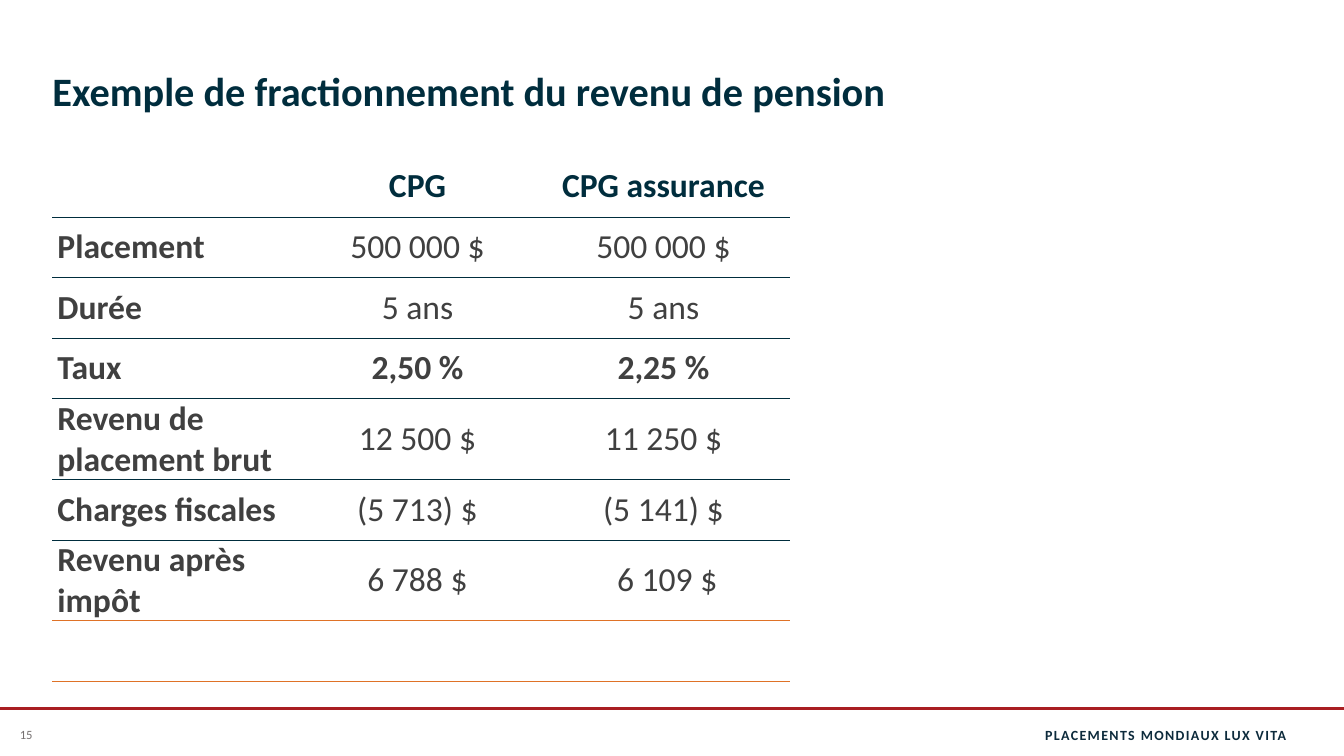
from dataclasses import dataclass

from lxml import etree
from pptx import Presentation
from pptx.dml.color import RGBColor
from pptx.enum.shapes import MSO_CONNECTOR
from pptx.enum.text import MSO_ANCHOR, MSO_AUTO_SIZE, PP_ALIGN
from pptx.oxml.ns import qn
from pptx.util import Pt

LEFT, CENTER, RIGHT = PP_ALIGN.LEFT, PP_ALIGN.CENTER, PP_ALIGN.RIGHT
MIDDLE, BOTTOM = MSO_ANCHOR.MIDDLE, MSO_ANCHOR.BOTTOM
STRAIGHT = MSO_CONNECTOR.STRAIGHT
NO_AUTOFIT = MSO_AUTO_SIZE.NONE

FONT = "Calibri"
COLORS = {
    "navy": "002D3D",
    "footer": "0D2B3C",
    "text": "404040",
    "gray": "767171",
    "red": "A91E22",
    "orange": "DF7227",
}

# Table cells end in a no-break space, except the last amount
TABLE_ROWS = [
    ("", "CPG ", "CPG assurance "),
    ("Placement ", "500 000 $ ", "500 000 $ "),
    ("Durée ", "5 ans ", "5 ans "),
    ("Taux ", "2,50 % ", "2,25 % "),
    ("Revenu de placement brut ", "12 500 $ ", "11 250 $ "),
    ("Charges fiscales ", "(5 713) $ ", "(5 141) $ "),
    ("Revenu après impôt ", "6 788 $ ", "6 109 $"),
    ("", "", ""),
]
RATE_ROW = 3
TABLE_LEFT, TABLE_TOP = 37.44, 111.6
COLUMN_WIDTH, ROW_HEIGHT = 175.68, 43.3


@dataclass
class TextStyle:
    size: float
    color: str
    bold: bool = False
    align: PP_ALIGN = LEFT


@dataclass
class Rule:
    color: str
    width: float


@dataclass
class FooterBox:
    text: str
    left: float
    width: float
    margin: float
    style: TextStyle
    spacing: int = 0


ROW_RULE = Rule("navy", 0.5)
TOTAL_RULE = Rule("orange", 1)
# One rule above each row, plus the one below the last row
RULES = [None] + [ROW_RULE] * 6 + [TOTAL_RULE] * 2

FOOTERS = [
    FooterBox("PLACEMENTS MONDIAUX LUX VITA", 696.24, 222.48, 0,
              TextStyle(10, "footer", True, RIGHT), 100),
    FooterBox("15", 0, 37.44, 7.2, TextStyle(9, "gray", align=CENTER)),
]


def rgb(name: str) -> RGBColor:
    return RGBColor.from_string(COLORS[name])


def write(frame, text: str, style: TextStyle) -> None:
    frame.text = text
    para = frame.paragraphs[0]
    para.alignment = style.align
    for span in para.runs:
        span.font.name = FONT
        span.font.size = Pt(style.size)
        span.font.bold = style.bold
        span.font.color.rgb = rgb(style.color)


def set_border(cell, side: str, rule: Rule | None) -> None:
    line = etree.SubElement(cell._tc.get_or_add_tcPr(), qn(f"a:{side}"))
    if rule is None:
        line.set("w", "0")
        etree.SubElement(line, qn("a:noFill"))
        return
    line.set("w", str(Pt(rule.width)))
    fill = etree.SubElement(line, qn("a:solidFill"))
    etree.SubElement(fill, qn("a:srgbClr")).set("val", COLORS[rule.color])


def cell_style(row: int, column: int) -> TextStyle:
    bold = column == 0 or row in (0, RATE_ROW)
    return TextStyle(24, "text" if row else "navy", bold,
                     CENTER if column else LEFT)


def add_title(page, text: str) -> None:
    title = page.shapes.title
    title.left, title.top = Pt(37.44), Pt(0)
    title.width, title.height = Pt(878.4), Pt(82.08)
    frame = title.text_frame
    frame.auto_size = NO_AUTOFIT
    frame.word_wrap = True
    frame.vertical_anchor = BOTTOM
    frame.margin_left = frame.margin_right = Pt(0)
    frame.margin_top = frame.margin_bottom = Pt(0)
    write(frame, text, TextStyle(28.8, "navy", True))


def add_comparison(page) -> None:
    rows, columns = len(TABLE_ROWS), len(TABLE_ROWS[0])
    table = page.shapes.add_table(
        rows, columns, Pt(TABLE_LEFT), Pt(TABLE_TOP),
        Pt(COLUMN_WIDTH * columns), Pt(ROW_HEIGHT * rows)).table
    table.first_row = table.horz_banding = False
    for column in table.columns:
        column.width = Pt(COLUMN_WIDTH)
    for r, texts in enumerate(TABLE_ROWS):
        table.rows[r].height = Pt(ROW_HEIGHT)
        for c, text in enumerate(texts):
            cell = table.cell(r, c)
            cell.vertical_anchor = MIDDLE
            cell.margin_left = cell.margin_right = Pt(3.6)
            cell.margin_top = cell.margin_bottom = Pt(0)
            write(cell.text_frame, text, cell_style(r, c))
            borders = {"lnL": None, "lnR": None,
                       "lnT": RULES[r], "lnB": RULES[r + 1]}
            for side, rule in borders.items():
                set_border(cell, side, rule)
            cell.fill.background()
    table.cell(rows - 1, 0).merge(table.cell(rows - 1, columns - 1))


def add_footer_line(page) -> None:
    line = page.shapes.add_connector(STRAIGHT, Pt(0), Pt(506.16),
                                     Pt(960), Pt(506.16))
    line.line.color.rgb = rgb("red")
    line.line.width = Pt(2.25)
    etree.SubElement(line._element.spPr, qn("a:effectLst"))


def add_footer(page, footer: FooterBox) -> None:
    box = page.shapes.add_textbox(Pt(footer.left), Pt(510.48),
                                  Pt(footer.width), Pt(28.8))
    frame = box.text_frame
    frame.word_wrap = True
    frame.vertical_anchor = MIDDLE
    frame.margin_left = frame.margin_right = Pt(footer.margin)
    write(frame, footer.text, footer.style)
    if footer.spacing:
        span = frame.paragraphs[0].runs[0]
        span.font._element.set("spc", str(footer.spacing))


def main() -> None:
    deck = Presentation()
    deck.slide_width, deck.slide_height = Pt(960), Pt(540)
    page = deck.slides.add_slide(deck.slide_layouts[5])

    # Footer band
    add_footer_line(page)
    for footer in FOOTERS:
        add_footer(page, footer)

    # Title and comparison table
    add_title(page, "Exemple de fractionnement du revenu de pension")
    add_comparison(page)

    deck.save("out.pptx")


if __name__ == "__main__":
    main()
